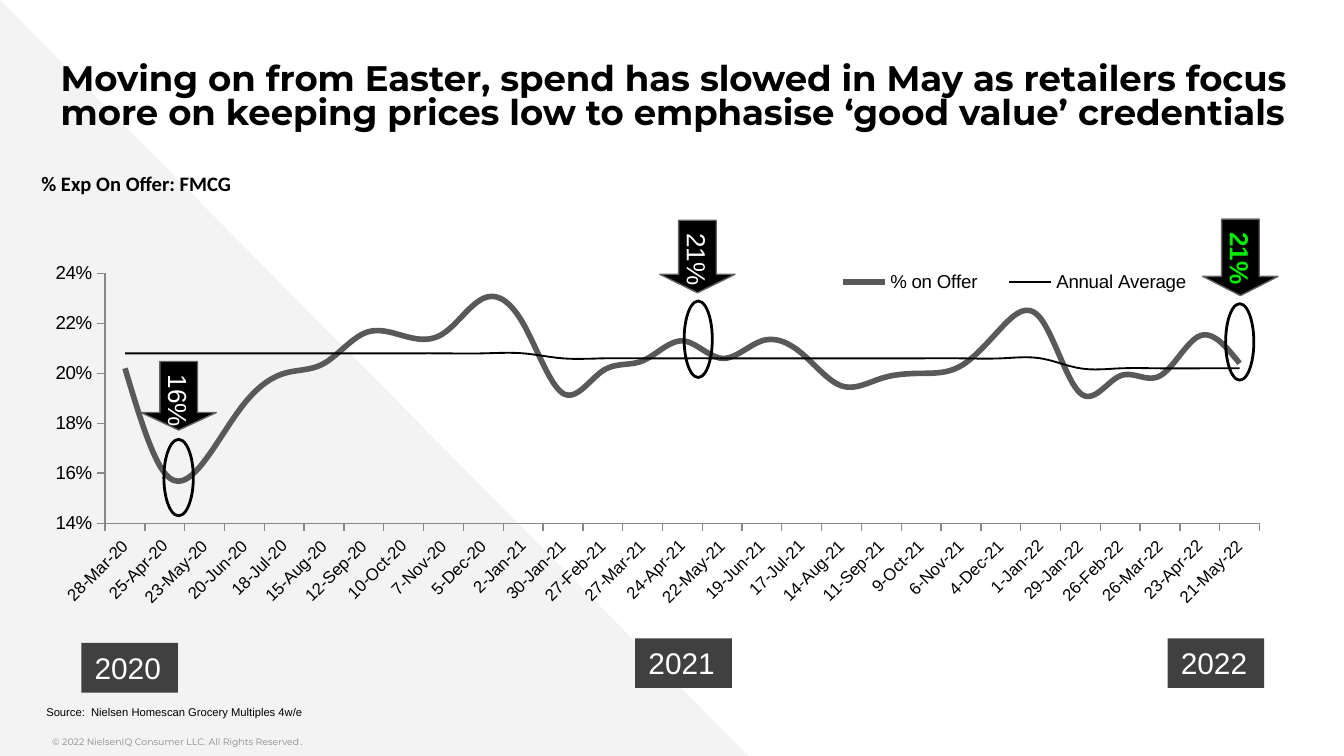
from dataclasses import dataclass

from lxml import etree
from pptx import Presentation
from pptx.chart.data import CategoryChartData
from pptx.dml.color import RGBColor
from pptx.enum.chart import XL_CHART_TYPE, XL_LEGEND_POSITION, XL_TICK_LABEL_POSITION, XL_TICK_MARK
from pptx.enum.shapes import MSO_SHAPE
from pptx.enum.text import MSO_ANCHOR, MSO_AUTO_SIZE, PP_ALIGN
from pptx.oxml import parse_xml
from pptx.oxml.ns import nsdecls, qn
from pptx.util import Pt

LINE = XL_CHART_TYPE.LINE
RIGHT = XL_LEGEND_POSITION.RIGHT
LOW = XL_TICK_LABEL_POSITION.LOW
OUT, NONE = XL_TICK_MARK.OUTSIDE, XL_TICK_MARK.NONE
RECT, OVAL = MSO_SHAPE.RECTANGLE, MSO_SHAPE.OVAL
ARROW, WEDGE = MSO_SHAPE.DOWN_ARROW, MSO_SHAPE.RIGHT_TRIANGLE
TOP, MIDDLE = MSO_ANCHOR.TOP, MSO_ANCHOR.MIDDLE
FIT, FIXED = MSO_AUTO_SIZE.SHAPE_TO_FIT_TEXT, MSO_AUTO_SIZE.NONE
LEFT, CENTER = PP_ALIGN.LEFT, PP_ALIGN.CENTER

COLORS = {"black": "000000", "white": "FFFFFF", "wedge": "F3F3F3", "note": "888888",
          "offer": "595959", "edge": "616365", "year": "404040", "green": "00F000"}


@dataclass
class Box:
    left: float
    top: float
    width: float
    height: float


@dataclass
class Callout:
    text: str
    arrow: Box
    ring: Box
    color: str = "white"
    bold: bool = False


@dataclass
class Year:
    text: str
    left: float
    top: float = 342


CALLOUTS = [
    Callout("16%", Box(75.6, 193.7, 40.3, 36.7), Box(87.8, 235.4, 15.8, 41)),
    Callout("21%", Box(353.5, 118, 40.3, 38.9), Box(366.5, 161.3, 15.1, 41)),
    Callout("21%", Box(644.4, 117.4, 40.3, 41), Box(656.6, 162.7, 15.1, 41), "green", True),
]
YEARS = [Year("2020", 43.6, 344.5), Year("2021", 340.3), Year("2022", 625.5)]

FIRST_DAY, STEP = 43918, 28  # 28-Mar-20 as a date serial, then every four weeks
OFFER = [0.202, 0.16, 0.165, 0.188, 0.2, 0.204, 0.216, 0.215, 0.216, 0.23,
         0.22, 0.192, 0.201, 0.205, 0.213, 0.206, 0.213, 0.208, 0.195, 0.198,
         0.2, 0.203, 0.218, 0.222, 0.192, 0.199, 0.199, 0.215, 0.204]
AVERAGE = [0.208] * 11 + [0.206] * 13 + [0.202] * 5


def rgb(name: str) -> RGBColor:
    return RGBColor.from_string(COLORS[name])


def place(shape, box: Box) -> None:
    shape.left, shape.top = Pt(box.left), Pt(box.top)
    shape.width, shape.height = Pt(box.width), Pt(box.height)


def style(font, size: float, color: str = "black", face: str = "Arial", bold: bool = False) -> None:
    font.size, font.name, font.bold = Pt(size), face, bold
    font.color.rgb = rgb(color)


def write(para, text: str, size: float, color: str = "black",
          face: str = "Arial", bold: bool = False) -> None:
    run = para.add_run()
    run.text = text
    style(run.font, size, color, face, bold)


def inset(frame, side: float, end: float) -> None:
    frame.margin_left = frame.margin_right = Pt(side)
    frame.margin_top = frame.margin_bottom = Pt(end)


def draw(slide, kind, box: Box, fill: str = "", line: str = "", weight: float = 0):
    """Add a preset shape; an empty colour name means no fill or no line."""
    shape = slide.shapes.add_shape(kind, Pt(0), Pt(0), Pt(1), Pt(1))
    place(shape, box)
    shape.shadow.inherit = False
    if fill:
        shape.fill.solid()
        shape.fill.fore_color.rgb = rgb(fill)
    else:
        shape.fill.background()
    if line:
        shape.line.color.rgb = rgb(line)
        shape.line.width = Pt(weight)
    else:
        shape.line.fill.background()
    return shape


def fill_holder(holder, box: Box):
    """Move a placeholder, reset its frame and return its first paragraph."""
    place(holder, box)
    frame = holder.text_frame
    inset(frame, 0, 7.2)
    frame.word_wrap, frame.auto_size, frame.vertical_anchor = True, FIXED, TOP
    para = frame.paragraphs[0]
    para.alignment, para.space_before = LEFT, Pt(0)
    return para


def add_text(slide, box: Box, wrap: bool):
    shape = slide.shapes.add_textbox(Pt(0), Pt(0), Pt(1), Pt(1))
    place(shape, box)
    shape.text_frame.word_wrap = wrap
    return shape.text_frame


def set_layout(parent, index: int, sizes: tuple[float, ...], inner: bool = False) -> None:
    """Give a chart part a manual layout: x, y, width, height as fractions."""
    for old in parent.findall(qn("c:layout")):
        parent.remove(old)
    target = '<c:layoutTarget val="inner"/>' if inner else ""
    marks = "".join(f'<c:{tag} val="{val}"/>' for tag, val in zip("xywh", sizes))
    parent.insert(index, parse_xml(
        f'<c:layout {nsdecls("c")}><c:manualLayout>{target}<c:xMode val="edge"/>'
        f'<c:yMode val="edge"/>{marks}</c:manualLayout></c:layout>'))


def add_trend(slide, box: Box) -> None:
    data = CategoryChartData(number_format="0%")
    data.categories = [FIRST_DAY + STEP * i for i in range(len(OFFER))]
    data.categories.number_format = "d-mmm-yy"
    data.add_series("% on Offer", OFFER)
    data.add_series("Annual Average", AVERAGE)
    chart = slide.shapes.add_chart(LINE, Pt(box.left), Pt(box.top),
                                   Pt(box.width), Pt(box.height), data).chart
    style(chart.font, 10)
    chart.has_title = False
    for series, color, weight in zip(chart.plots[0].series, ("offer", "black"), (3, 1)):
        series.smooth = True
        series.format.line.color.rgb = rgb(color)
        series.format.line.width = Pt(weight)
    chart.plots[0].vary_by_categories = False

    dates, rate = chart.category_axis, chart.value_axis
    for axis, size, form in ((dates, 9, "d-mmm-yy"), (rate, 10, "0%")):
        axis.has_major_gridlines = False
        axis.major_tick_mark, axis.minor_tick_mark = OUT, NONE
        axis.format.line.color.rgb = rgb("note")
        axis.format.line.width = Pt(0.75)
        style(axis.tick_labels.font, size)
        axis.tick_labels.number_format = form
        axis.tick_labels.number_format_is_linked = False
    dates.tick_label_position = LOW
    dates._element.find(qn("c:auto")).set("val", "0")
    dates._element.find(qn("c:txPr")).find(qn("a:bodyPr")).set("rot", "-2700000")
    rate.minimum_scale, rate.maximum_scale, rate.major_unit = 0.14, 0.24, 0.02

    chart.has_legend = True
    legend = chart.legend
    legend.position, legend.include_in_layout = RIGHT, False
    style(legend.font, 10)
    set_layout(legend._element, 1, (0.61, 0.03, 0.31, 0.08))
    set_layout(chart.plots[0]._element.getparent(), 0, (0.049, 0.051, 0.909, 0.572), True)


def add_callout(slide, call: Callout) -> None:
    draw(slide, OVAL, call.ring, line="black", weight=1.5)
    arrow = draw(slide, ARROW, call.arrow, "black", "edge", 0.75)
    arrow.adjustments[0], arrow.adjustments[1] = 0.5, 0.255
    frame = arrow.text_frame
    frame.word_wrap, frame.vertical_anchor = False, MIDDLE
    frame._txBody.find(qn("a:bodyPr")).set("vert", "eaVert")
    para = frame.paragraphs[0]
    para.alignment = CENTER
    write(para, call.text, 14, call.color, bold=call.bold)


def add_year(slide, year: Year) -> None:
    frame = draw(slide, RECT, Box(year.left, year.top, 51.8, 26.6), "year").text_frame
    frame.word_wrap, frame.auto_size, frame.vertical_anchor = False, FIT, TOP
    frame.paragraphs[0].alignment = LEFT
    write(frame.paragraphs[0], year.text, 16, "white")


def main() -> None:
    deck = Presentation()
    deck.slide_width, deck.slide_height = Pt(720), Pt(405)
    slide = deck.slides.add_slide(deck.slide_layouts[1])
    title, body = slide.shapes.title, slide.placeholders[1]
    wedge = draw(slide, WEDGE, Box(0, 0, 401, 405), "wedge")
    title._element.addprevious(wedge._element)

    para = fill_holder(title, Box(32.5, 27.4, 697, 47.5))
    para.line_spacing = 0.8
    write(para, "Moving on from Easter, spend has slowed in May as retailers focus more on "
          "keeping prices low to emphasise ‘good value’ credentials", 19, face="Montserrat", bold=True)
    para = fill_holder(body, Box(15.8, 370.8, 360, 41))
    props = para._p.get_or_add_pPr()
    props.set("marL", str(Pt(9)))
    props.set("indent", "0")
    etree.SubElement(props, qn("a:buNone"))
    write(para, "Source:  Nielsen Homescan Grocery Multiples 4w/e", 6)

    frame = add_text(slide, Box(28, 391, 399, 14.5), True)
    inset(frame, 0, 3.6)
    write(frame.paragraphs[0], "© 2022 NielsenIQ Consumer LLC. All Rights Reserved", 5, "note", "Montserrat")
    write(frame.paragraphs[0], ".", 5, "note")
    add_trend(slide, Box(23, 134.6, 680.4, 234))
    frame = add_text(slide, Box(15.1, 87.8, 120.2, 20.9), False)
    write(frame.paragraphs[0], "% Exp On Offer: FMCG", 11, face="Calibri", bold=True)
    for call in CALLOUTS:
        add_callout(slide, call)
    for year in YEARS:
        add_year(slide, year)
    deck.save("out.pptx")


if __name__ == "__main__":
    main()
